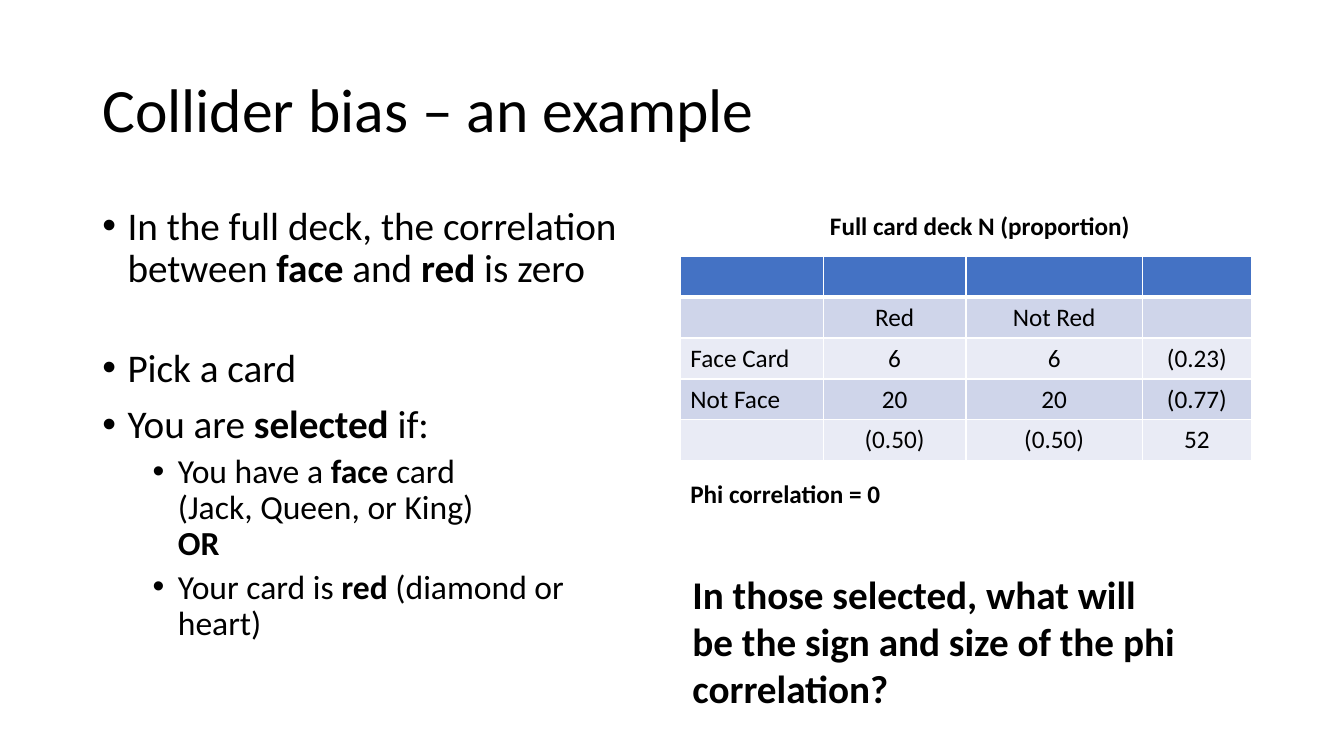
from lxml.etree import SubElement
from pptx import Presentation
from pptx.dml.color import RGBColor
from pptx.enum.shapes import MSO_SHAPE
from pptx.enum.text import MSO_ANCHOR, PP_ALIGN
from pptx.oxml.ns import qn
from pptx.util import Pt

PX = 9525


def color(code):
    return RGBColor.from_string(code)


def write(para, runs, size):
    for text, bold in runs:
        for i, line in enumerate(text.split("\n")):
            if i:
                para.add_line_break()
            if line:
                run = para.add_run()
                run.text = line
                run.font.name = "Calibri"
                run.font.size = Pt(size)
                run.font.bold = bold
                run.font.color.rgb = color("000000")


deck = Presentation()
deck.slide_width = 1280 * PX
deck.slide_height = 720 * PX
slide = deck.slides.add_slide(deck.slide_layouts[6])
shapes = slide.shapes

title = shapes.add_textbox(88 * PX, 38 * PX, 1104 * PX, 139 * PX).text_frame
title.word_wrap = True
title.vertical_anchor = MSO_ANCHOR.MIDDLE
title.paragraphs[0].line_spacing = 0.9
write(title.paragraphs[0], [("Collider bias – an example", False)], 44)

body = shapes.add_textbox(88 * PX, 192 * PX, 544 * PX, 457 * PX).text_frame
body.word_wrap = True
points = [
    (0, 10, [("In the full deck, the correlation between ", False), ("face ", True),
             ("and ", False), ("red ", True), ("is zero", False)]),
    (0, 41, [("Pick a card", False)]),
    (0, 10, [("You are ", False), ("selected ", True), ("if:", False)]),
    (1, 5, [("You have a ", False), ("face ", True),
            ("card \n(Jack, Queen, or King) \n", False), ("OR", True)]),
    (1, 5, [("Your card is ", False), ("red ", True), ("(diamond or heart)", False)]),
]
for i, (level, gap, runs) in enumerate(points):
    para = body.add_paragraph() if i else body.paragraphs[0]
    para.level = level
    para.line_spacing = 0.9
    para.space_before = Pt(gap)
    props = para._p.get_or_add_pPr()
    props.set("marL", str((24 + 48 * level) * PX))
    props.set("indent", str(-24 * PX))
    SubElement(props, qn("a:buFont"), typeface="Arial")
    SubElement(props, qn("a:buChar"), char="•")
    write(para, runs, 28 - 4 * level)

rows = [
    ["", "", "", ""],
    ["", "Red", "Not Red", ""],
    ["Face Card", "6", "6", "(0.23)"],
    ["Not Face", "20", "20", "(0.77)"],
    ["", "(0.50)", "(0.50)", "52"],
]
fills = ["4472C4", "CFD5EA", "E9EBF5", "CFD5EA", "E9EBF5"]
table = shapes.add_table(5, 4, 648 * PX, 244 * PX, 544 * PX, 195 * PX).table
for col, width in zip(table.columns, [136, 136, 168, 104]):
    col.width = width * PX
for r, row in enumerate(rows):
    table.rows[r].height = 39 * PX
    for c, text in enumerate(row):
        cell = table.cell(r, c)
        props = cell._tc.get_or_add_tcPr()
        for side in "LRTB":
            thick = (r, side) in [(0, "B"), (1, "T")]
            line = SubElement(props, qn("a:ln" + side), w=str(Pt(3 if thick else 1)))
            SubElement(SubElement(line, qn("a:solidFill")), qn("a:srgbClr"), val="FFFFFF")
        cell.fill.solid()
        cell.fill.fore_color.rgb = color(fills[r])
        para = cell.text_frame.paragraphs[0]
        para.alignment = PP_ALIGN.CENTER if c else PP_ALIGN.LEFT
        write(para, [(text, False)], 18)

labels = [
    ("Full card deck N (proportion)", 781, 196, 326),
    ("Phi correlation = 0", 648, 451, 223),
]
for text, left, top, width in labels:
    label = shapes.add_textbox(left * PX, top * PX, width * PX, 38 * PX).text_frame
    label.word_wrap = True
    write(label.paragraphs[0], [(text, True)], 18)

query = shapes.add_shape(MSO_SHAPE.RECTANGLE, 650 * PX, 538 * PX, 482 * PX, 145 * PX)
query.shadow.inherit = False
query.fill.solid()
query.fill.fore_color.rgb = color("FFFFFF")
query.line.fill.background()
frame = query.text_frame
frame.word_wrap = True
frame.vertical_anchor = MSO_ANCHOR.TOP
frame.paragraphs[0].alignment = PP_ALIGN.LEFT
ask = "In those selected, what will be the sign and size of the phi correlation?"
write(frame.paragraphs[0], [(ask, True)], 28)

deck.save("out.pptx")
